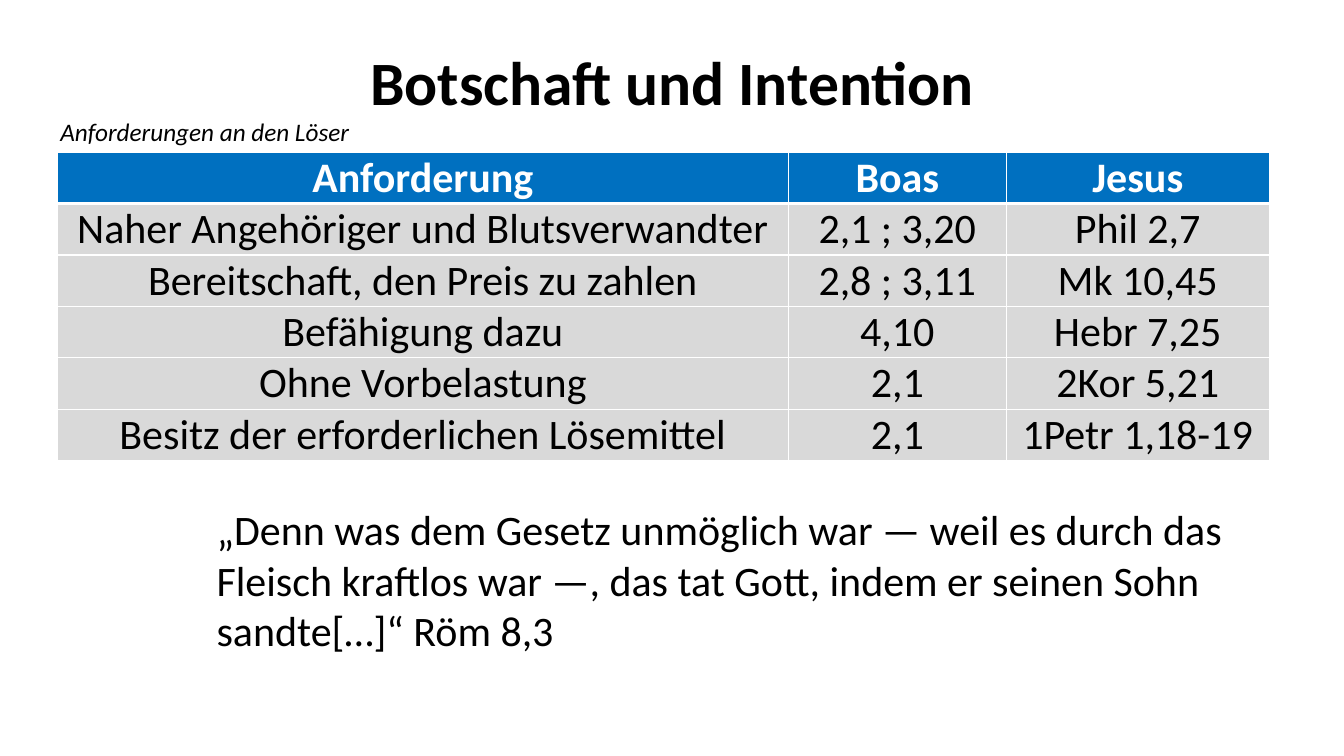
from dataclasses import dataclass

from lxml.etree import SubElement
from pptx import Presentation
from pptx.dml.color import RGBColor
from pptx.enum.text import MSO_ANCHOR as Anchor, MSO_AUTO_SIZE as AutoSize, PP_ALIGN as Align
from pptx.oxml.ns import qn
from pptx.util import Inches, Pt


@dataclass(frozen=True)
class Theme:
    font: str = "Calibri"
    ink: str = "000000"
    white: str = "FFFFFF"
    header_fill: str = "0070C0"
    body_fill: str = "D9D9D9"
    title_size: int = 44
    text_size: int = 30
    caption_size: int = 18


def write_text(frame, text, *, font, size, color, bold=False, italic=False,
               align=Align.LEFT, line_spacing=None):
    """Fill a text frame with one formatted paragraph."""
    paragraph = frame.paragraphs[0]
    paragraph.alignment = align
    if line_spacing:
        paragraph.line_spacing = line_spacing
    run = paragraph.add_run()
    run.text = text
    run.font.name = font
    run.font.size = Pt(size)
    run.font.bold = bold
    run.font.italic = italic
    run.font.color.rgb = RGBColor.from_string(color)


def set_cell_borders(cell, color, bottom_width=1, top_width=1):
    properties = cell._tc.get_or_add_tcPr()
    widths = {"lnL": 1, "lnR": 1, "lnT": top_width, "lnB": bottom_width}
    for side, width in widths.items():
        line = SubElement(properties, qn(f"a:{side}"), w=str(Pt(width)))
        fill = SubElement(line, qn("a:solidFill"))
        SubElement(fill, qn("a:srgbClr"), val=color)


class SlideBuilder:
    def __init__(self, slide, theme):
        self.slide = slide
        self.theme = theme

    def title(self, text, left, top, width, height):
        shape = self.slide.shapes.title
        shape.left, shape.top = Inches(left), Inches(top)
        shape.width, shape.height = Inches(width), Inches(height)
        frame = shape.text_frame
        frame.auto_size = AutoSize.NONE
        frame.vertical_anchor = Anchor.MIDDLE
        write_text(frame, text, font=self.theme.font, size=self.theme.title_size,
                   color=self.theme.ink, bold=True, align=Align.CENTER, line_spacing=0.9)

    def text_box(self, text, left, top, width, height, size, wrap=True, italic=False):
        shape = self.slide.shapes.add_textbox(
            Inches(left), Inches(top), Inches(width), Inches(height))
        frame = shape.text_frame
        frame.word_wrap = wrap
        frame.auto_size = AutoSize.SHAPE_TO_FIT_TEXT
        write_text(frame, text, font=self.theme.font, size=size,
                   color=self.theme.ink, italic=italic)

    def table(self, rows, left, top, column_widths, row_height):
        table = self.slide.shapes.add_table(
            len(rows), len(column_widths), Inches(left), Inches(top),
            Inches(sum(column_widths)), Inches(row_height * len(rows))).table
        table.horz_banding = False
        for column, width in zip(table.columns, column_widths):
            column.width = Inches(width)
        for row_index, values in enumerate(rows):
            table.rows[row_index].height = Inches(row_height)
            for column_index, value in enumerate(values):
                self.table_cell(table.cell(row_index, column_index), value, row_index)

    def table_cell(self, cell, text, row_index):
        theme = self.theme
        header = row_index == 0
        set_cell_borders(cell, theme.white, bottom_width=3 if header else 1,
                         top_width=3 if row_index == 1 else 1)
        cell.fill.solid()
        cell.fill.fore_color.rgb = RGBColor.from_string(
            theme.header_fill if header else theme.body_fill)
        cell.vertical_anchor = Anchor.MIDDLE
        cell.margin_left = cell.margin_right = Inches(0.14)
        cell.margin_top = cell.margin_bottom = 0
        write_text(cell.text_frame, text, font=theme.font, size=theme.text_size,
                   color=theme.white if header else theme.ink,
                   bold=header, align=Align.CENTER)


REQUIREMENTS = [
    ("Anforderung", "Boas", "Jesus"),
    ("Naher Angehöriger und Blutsverwandter", "2,1 ; 3,20", "Phil 2,7"),
    ("Bereitschaft, den Preis zu zahlen", "2,8 ; 3,11", "Mk 10,45"),
    ("Befähigung dazu", "4,10", "Hebr 7,25"),
    ("Ohne Vorbelastung", "2,1", "2Kor 5,21"),
    ("Besitz der erforderlichen Lösemittel", "2,1", "1Petr 1,18-19"),
]
QUOTE = ("„Denn was dem Gesetz unmöglich war — weil es durch das Fleisch kraftlos "
         "war —, das tat Gott, indem er seinen Sohn sandte[…]“ Röm 8,3")


def main():
    presentation = Presentation()
    presentation.slide_width = Inches(13.33)
    presentation.slide_height = Inches(7.5)
    title_only = presentation.slide_layouts[5]
    theme = Theme()
    builder = SlideBuilder(presentation.slides.add_slide(title_only), theme)

    # Heading
    builder.title("Botschaft und Intention", 0.92, 0.4, 11.5, 0.89)

    # Requirements table with its caption
    builder.table(REQUIREMENTS, 0.57, 1.51, (7.25, 2.16, 2.61), 0.51)
    builder.text_box("Anforderungen an den Löser", 0.5, 1.11, 3.1, 0.4,
                     theme.caption_size, wrap=False, italic=True)

    # Closing quotation
    builder.text_box(QUOTE, 2.05, 4.95, 10.57, 1.62, theme.text_size)

    presentation.save("out.pptx")


if __name__ == "__main__":
    main()
